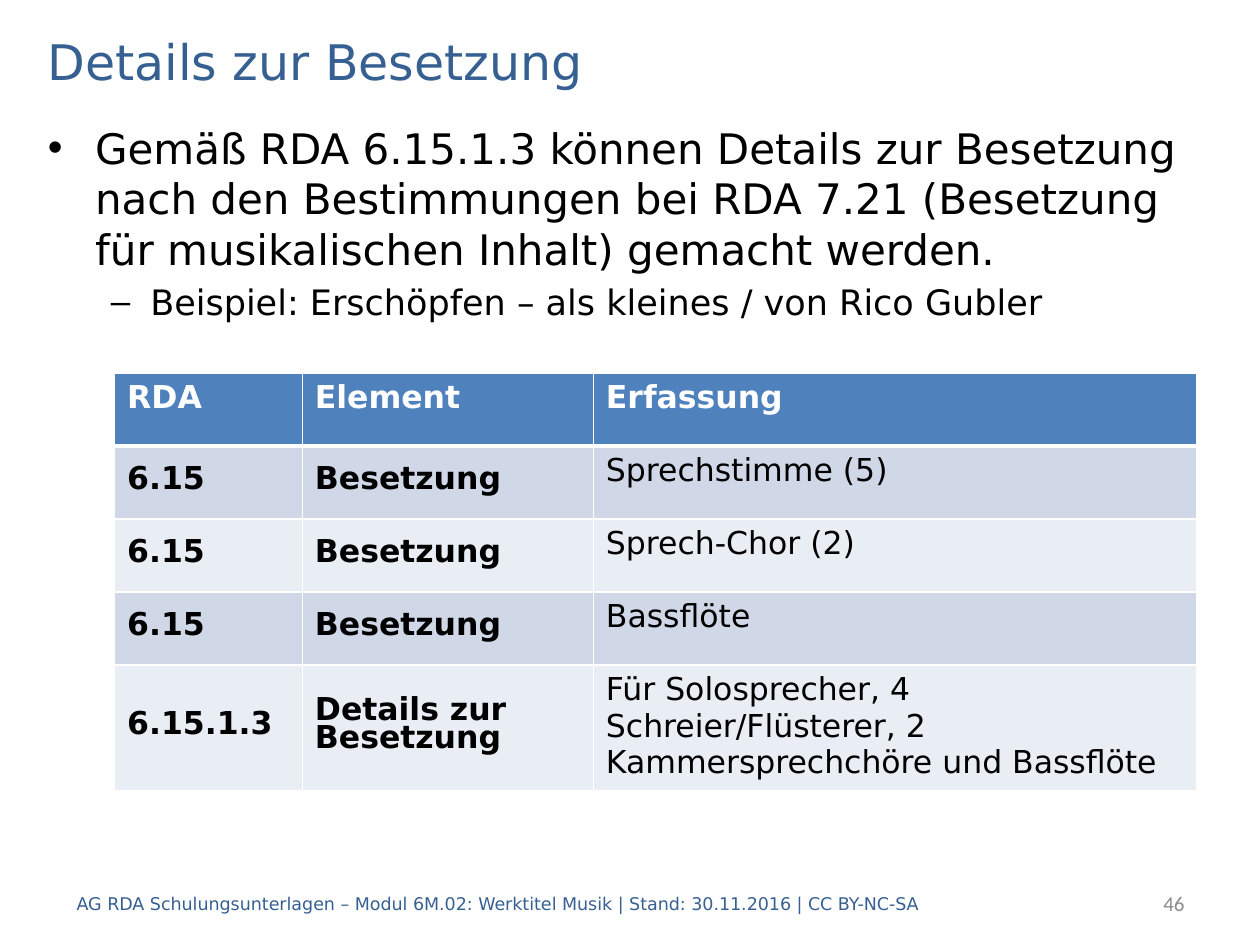
from dataclasses import dataclass

from lxml import etree
from pptx import Presentation
from pptx.dml.color import RGBColor
from pptx.enum.text import MSO_ANCHOR, MSO_AUTO_SIZE, PP_ALIGN
from pptx.oxml.ns import qn
from pptx.util import Inches, Pt

LEFT, RIGHT = PP_ALIGN.LEFT, PP_ALIGN.RIGHT
TOP, MIDDLE = MSO_ANCHOR.TOP, MSO_ANCHOR.MIDDLE
NO_FIT = MSO_AUTO_SIZE.NONE


@dataclass(frozen=True)
class Theme:
    """Colours, fonts and type sizes of the slide."""
    font: str = "DejaVu Sans"
    number_font: str = "Calibri"
    heading: str = "376092"
    text: str = "000000"
    muted: str = "8C8C8C"
    white: str = "FFFFFF"
    header: str = "4F81BD"
    bands: tuple = ("D0D8E8", "E9EDF4")
    title_size: int = 28
    body_sizes: tuple = (24, 20)
    table_size: int = 18
    footer_size: int = 10
    number_size: int = 12


THEME = Theme()
BULLETS = [
    (0, "Gemäß RDA 6.15.1.3 können Details zur Besetzung nach den Bestimmungen "
        "bei RDA 7.21 (Besetzung für musikalischen Inhalt) gemacht werden."),
    (1, "Beispiel: Erschöpfen – als kleines / von Rico Gubler"),
]
ROWS = [
    ("RDA", "Element", "Erfassung"),
    ("6.15", "Besetzung", "Sprechstimme (5)"),
    ("6.15", "Besetzung", "Sprech-Chor (2)"),
    ("6.15", "Besetzung", "Bassflöte"),
    ("6.15.1.3", "Details zur Besetzung",
     "Für Solosprecher, 4 Schreier/Flüsterer, 2 Kammersprechchöre und Bassflöte"),
]
COLUMN_WIDTHS = (1.49, 2.31, 4.79)
ROW_HEIGHTS = (0.58, 0.58, 0.58, 0.58, 1)


def apply(target, values):
    """Set every attribute named in values on the target."""
    for name, value in values.items():
        setattr(target, name, value)


def place(shape, left, top, width, height):
    """Move and size a shape in inches."""
    names = ("left", "top", "width", "height")
    apply(shape, dict(zip(names, map(Inches, (left, top, width, height)))))


def write(para, text, size, color, font=THEME.font, bold=False, **layout):
    """Write one formatted span into a paragraph."""
    apply(para, layout)
    span = para.add_run()
    span.text = text
    apply(span.font, {"name": font, "size": Pt(size), "bold": bold})
    span.font.color.rgb = RGBColor.from_string(color)


def fill_title(title, text):
    """Place and fill the title placeholder."""
    place(title, 0.28, 0.2, 9.45, 0.56)
    apply(title.text_frame, {"vertical_anchor": MIDDLE, "auto_size": NO_FIT})
    write(title.text_frame.paragraphs[0], text, THEME.title_size, THEME.heading,
          alignment=LEFT)


def fill_body(body, bullets):
    """Place and fill the body placeholder with levelled bullets."""
    place(body, 0.28, 0.92, 9.45, 5.98)
    frame = body.text_frame
    frame.auto_size = NO_FIT
    for index, (level, text) in enumerate(bullets):
        para = frame.add_paragraph() if index else frame.paragraphs[0]
        write(para, text, THEME.body_sizes[level], THEME.text, level=level)


def add_label(slide, bounds, text, size, color, **layout):
    """Add a one-line text box centred vertically."""
    box = slide.shapes.add_textbox(*map(Inches, bounds))
    apply(box.text_frame, {"word_wrap": True, "vertical_anchor": MIDDLE})
    write(box.text_frame.paragraphs[0], text, size, color, **layout)


def border_cell(cell, widths):
    """Draw white cell borders with the given widths in points."""
    properties = cell._tc.get_or_add_tcPr()
    for side in "LRTB":
        line = etree.SubElement(properties, qn(f"a:ln{side}"),
                                w=str(Pt(widths.get(side, 1))))
        fill = etree.SubElement(line, qn("a:solidFill"))
        etree.SubElement(fill, qn("a:srgbClr"), val=THEME.white)


def fill_cell(cell, text, row, column):
    """Format a cell by its role: header, key column or entry."""
    is_header = row == 0
    is_key = not is_header and column < 2
    border_cell(cell, {0: {"B": 3}, 1: {"T": 3}}.get(row, {}))
    cell.fill.solid()
    color = THEME.header if is_header else THEME.bands[(row - 1) % 2]
    cell.fill.fore_color.rgb = RGBColor.from_string(color)
    cell.vertical_anchor = MIDDLE if is_key else TOP
    spacing = {"line_spacing": Pt(16), "space_before": Pt(6),
               "space_after": Pt(6)} if is_key else {}
    write(cell.text_frame.paragraphs[0], text, THEME.table_size,
          THEME.white if is_header else THEME.text,
          bold=is_header or is_key, **spacing)


def add_grid(slide, left, top, rows):
    """Add the table of recorded elements."""
    frame = slide.shapes.add_table(
        len(rows), len(COLUMN_WIDTHS), Inches(left), Inches(top),
        Inches(sum(COLUMN_WIDTHS)), Inches(sum(ROW_HEIGHTS)))
    table = frame.table
    for column, width in zip(table.columns, COLUMN_WIDTHS):
        column.width = Inches(width)
    for row, height in zip(table.rows, ROW_HEIGHTS):
        row.height = Inches(height)
    for row, texts in enumerate(rows):
        for column, text in enumerate(texts):
            fill_cell(table.cell(row, column), text, row, column)


def main():
    """Build and save the slide."""
    deck = Presentation()
    apply(deck, {"slide_width": Inches(10), "slide_height": Inches(7.5)})
    slide = deck.slides.add_slide(deck.slide_layouts[1])
    fill_title(slide.shapes.title, "Details zur Besetzung")
    fill_body(slide.placeholders[1], BULLETS)
    add_grid(slide, 0.91, 2.96, ROWS)
    add_label(slide, (0.51, 6.97, 7.8, 0.4),
              "AG RDA Schulungsunterlagen – Modul 6M.02: Werktitel Musik | "
              "Stand: 30.11.2016 | CC BY-NC-SA",
              THEME.footer_size, THEME.heading)
    add_label(slide, (7.91, 6.97, 1.59, 0.4), "46", THEME.number_size,
              THEME.muted, font=THEME.number_font, alignment=RIGHT)
    deck.save("out.pptx")


if __name__ == "__main__":
    main()
